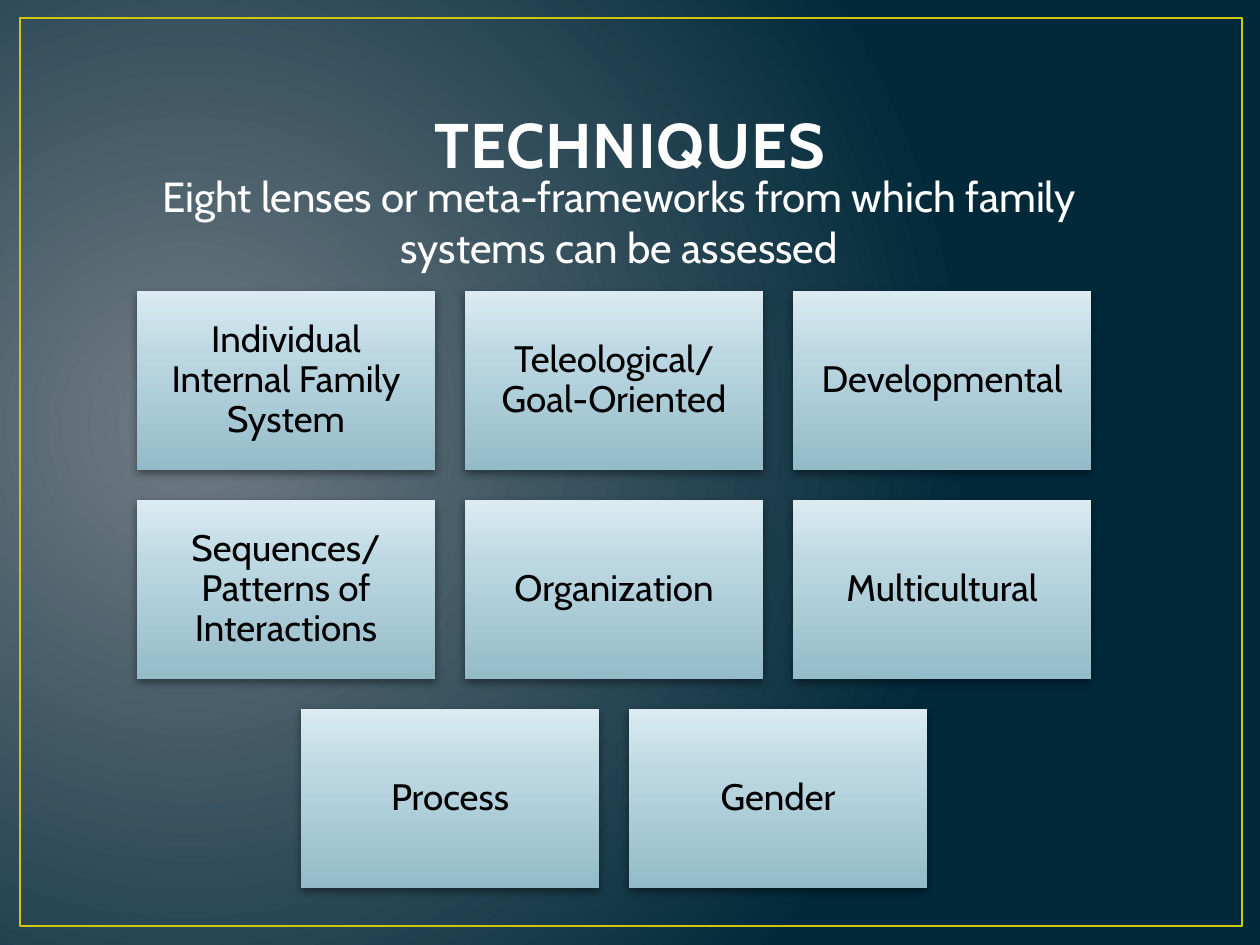
from lxml import etree
from pptx import Presentation
from pptx import util as u
from pptx.dml.color import RGBColor
from pptx.enum import shapes, text
from pptx.oxml import ns

PX = u.Inches(1) / 126
FONT = "Cabin"


def style(frame, size, color, anchor, inset):
    """Format the only paragraph of a text frame; return its run."""
    frame.word_wrap = True
    frame.auto_size = text.MSO_AUTO_SIZE.NONE
    frame.vertical_anchor = anchor
    frame.margin_left = frame.margin_right = inset
    frame.margin_top = frame.margin_bottom = int(6 * PX)
    para = frame.paragraphs[0]
    para.alignment = text.PP_ALIGN.CENTER
    span = para.runs[0]
    span.font.name = FONT
    span.font.size = u.Pt(size)
    span.font.color.rgb = RGBColor.from_string(color)
    return span


def set_gradient(properties, stops, direction):
    """Swap the solid fill of a properties element for a gradient."""
    stop_xml = "".join(
        f'<a:gs pos="{pos * 1000}"><a:srgbClr val="{color}"/></a:gs>' for pos, color in stops)
    gradient = etree.fromstring(
        f'<a:gradFill {ns.nsdecls("a")} rotWithShape="1"><a:gsLst>{stop_xml}</a:gsLst>{direction}</a:gradFill>')
    properties.replace(properties.find(ns.qn("a:solidFill")), gradient)


deck = Presentation()
deck.slide_width, deck.slide_height = int(1260 * PX), int(945 * PX)
page = deck.slides.add_slide(deck.slide_layouts[5])

# Background: radial glow on the left
page.background.fill.solid()
set_gradient(page.element.find(".//" + ns.qn("p:bgPr")),
             [(0, "717C84"), (100, "01293A")],
             '<a:path path="circle"><a:fillToRect l="15000" t="50000" r="85000" b="60000"/></a:path>')

# Border around the slide
border = page.shapes.add_shape(shapes.MSO_SHAPE.RECTANGLE,
                               *[int(n * PX) for n in (20, 18, 1222, 908)])
border.shadow.inherit = False
border.fill.background()
border.line.color.rgb = RGBColor.from_string("CFC60D")
border.line.width = u.Pt(1.5)

# Title
title = page.shapes.title
title.left, title.top, title.width, title.height = [int(n * PX) for n in (63, 73, 1134, 157)]
title.text_frame.text = "TECHNIQUES"
span = style(title.text_frame, 36, "FEFEFE", text.MSO_ANCHOR.BOTTOM, int(12 * PX))
span.font.bold = True
span.font._element.set("spc", "50")
title.text_frame.margin_bottom = int(49 * PX)

# Eight lenses, each row centred
ROWS = [
    ["Individual Internal Family System", "Teleological/Goal-Oriented", "Developmental"],
    ["Sequences/Patterns of Interactions", "Organization", "Multicultural"],
    ["Process", "Gender"],
]
LEFT, TOP, WIDTH, HEIGHT, GAP = 137, 291, 298, 179, 30
for row, labels in enumerate(ROWS):
    indent = (3 - len(labels)) * (WIDTH + GAP) // 2
    for column, label in enumerate(labels):
        x = LEFT + indent + column * (WIDTH + GAP)
        y = TOP + row * (HEIGHT + GAP)
        box = page.shapes.add_shape(shapes.MSO_SHAPE.RECTANGLE,
                                    *[int(n * PX) for n in (x, y, WIDTH, HEIGHT)])
        box.fill.solid()
        set_gradient(box._element.spPr, [(0, "94BBC8"), (65, "BCD8E2"), (100, "DBEBF1")],
                     '<a:lin ang="16200000" scaled="0"/>')
        box.line.fill.background()
        box.shadow.inherit = False
        box._element.spPr.find(ns.qn("a:effectLst")).append(etree.fromstring(
            f'<a:outerShdw {ns.nsdecls("a")} blurRad="{u.Pt(5)}" dist="{u.Pt(2)}" dir="5400000" '
            'rotWithShape="0"><a:srgbClr val="000000"><a:alpha val="43000"/></a:srgbClr></a:outerShdw>'))
        box.text_frame.text = label
        style(box.text_frame, 21, "000000", text.MSO_ANCHOR.MIDDLE, int(11 * PX))
        box.text_frame.paragraphs[0].line_spacing = 0.9

# Subtitle
subtitle = page.shapes.add_textbox(*[int(n * PX) for n in (73, 165, 1092, 115)])
subtitle.text_frame.text = "Eight lenses or meta-frameworks from which family systems can be assessed"
style(subtitle.text_frame, 24, "FEFEFE", text.MSO_ANCHOR.TOP, int(12 * PX))

deck.save("out.pptx")
